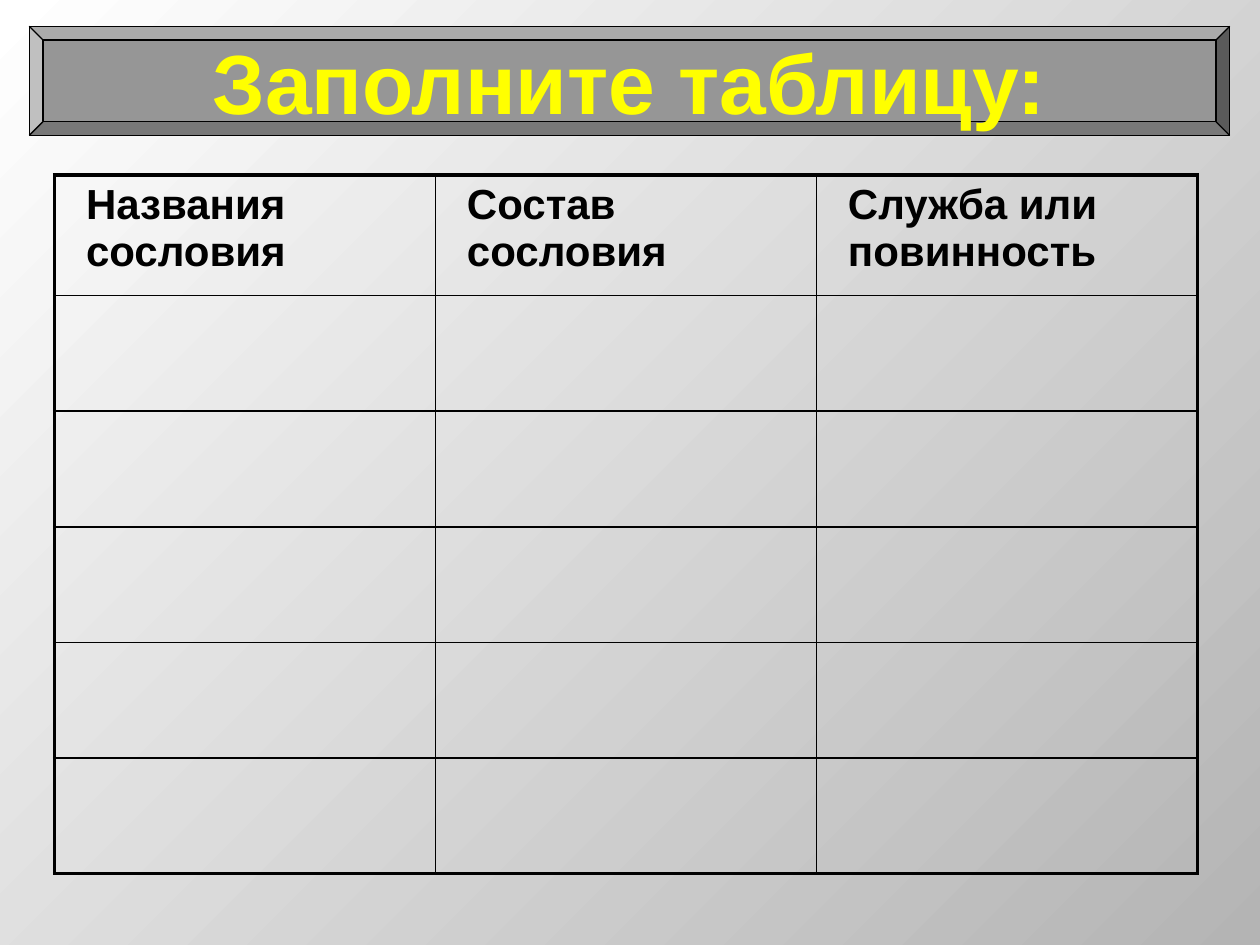
import pptx
import pptx.util
import pptx.dml.color
import pptx.enum.shapes
import pptx.enum.text
import pptx.oxml
import pptx.oxml.ns
from pptx.util import Cm, Pt

HEADS = ["Названия сословия", "Состав сословия", "Служба или повинность"]
ROWS = 6
BANNER = (Cm(0.59), Cm(0.53), Cm(24.2), Cm(2.2))
THIN, THICK = 1, 2.25


def color(code):
    return pptx.dml.color.RGBColor.from_string(code)


def style(par, size, code):
    font = par.font
    font.name, font.size, font.bold = "Arial", Pt(size), True
    font.color.rgb = color(code)


def paint(slide):
    fill = slide.background.fill
    fill.gradient()
    stops = fill.gradient_stops
    for stop, place, code in zip(stops, (0, 1), ("FFFFFF", "B4B4B4")):
        stop.position = place
        stop.color.rgb = color(code)
    qn = pptx.oxml.ns.qn
    grad = next(slide.background._cSld.iter(qn("a:gradFill")))
    grad.remove(grad.find(qn("a:lin")))
    grad.append(pptx.oxml.parse_xml(
        f'<a:path {pptx.oxml.ns.nsdecls("a")} path="circle">'
        '<a:fillToRect r="100000" b="100000"/></a:path>'))


def banner(slide, text):
    title = slide.shapes.title
    bevel = slide.shapes.add_shape(
        pptx.enum.shapes.MSO_SHAPE.BEVEL, *BANNER)
    bevel.adjustments[0] = 0.125
    bevel.shadow.inherit = False
    bevel.fill.solid()
    bevel.fill.fore_color.rgb = color("969696")
    bevel.line.color.rgb = color("000000")
    bevel.line.width = Pt(0.75)
    title.element.addprevious(bevel.element)

    title.left, title.top, title.width, title.height = BANNER
    frame = title.text_frame
    frame.text = text
    frame.word_wrap = False
    frame.auto_size = pptx.enum.text.MSO_AUTO_SIZE.NONE
    frame.vertical_anchor = pptx.enum.text.MSO_ANCHOR.MIDDLE
    par = frame.paragraphs[0]
    par.alignment = pptx.enum.text.PP_ALIGN.CENTER
    style(par, 48, "FFFF00")


def border(cell, sides):
    props = cell._tc.get_or_add_tcPr()
    for spot, (side, width) in enumerate(sides.items()):
        props.insert(spot, pptx.oxml.parse_xml(
            f'<a:ln{side} {pptx.oxml.ns.nsdecls("a")} w="{Pt(width)}">'
            '<a:solidFill><a:srgbClr val="000000"/></a:solidFill>'
            f'</a:ln{side}>'))


def label(cell, text):
    cell.text = text
    par = cell.text_frame.paragraphs[0]
    par.space_before = Pt(4.8)
    par._p.get_or_add_pPr().set("marL", str(Cm(0.38)))
    style(par, 24, "000000")


def grid(slide):
    cols = len(HEADS)
    table = slide.shapes.add_table(
        ROWS, cols, Cm(1.1), Cm(3.53), Cm(23.04), Cm(14.1)).table
    table.first_row = table.horz_banding = False
    for col in table.columns:
        col.width = Cm(7.68)
    for i, row in enumerate(table.rows):
        row.height = Cm(2.33 if i else 2.43)
        for j, cell in enumerate(row.cells):
            cell.fill.background()
            border(cell, {
                "L": THIN if j else THICK,
                "R": THICK if j == cols - 1 else THIN,
                "T": THIN if i else THICK,
                "B": THICK if i == ROWS - 1 else THIN,
            })
    for j, text in enumerate(HEADS):
        label(table.cell(0, j), text)


def main():
    deck = pptx.Presentation()
    deck.slide_width, deck.slide_height = Cm(25.4), Cm(19.05)
    slide = deck.slides.add_slide(deck.slide_layouts[5])
    paint(slide)
    grid(slide)
    banner(slide, "Заполните таблицу:")
    deck.save("out.pptx")


if __name__ == "__main__":
    main()
